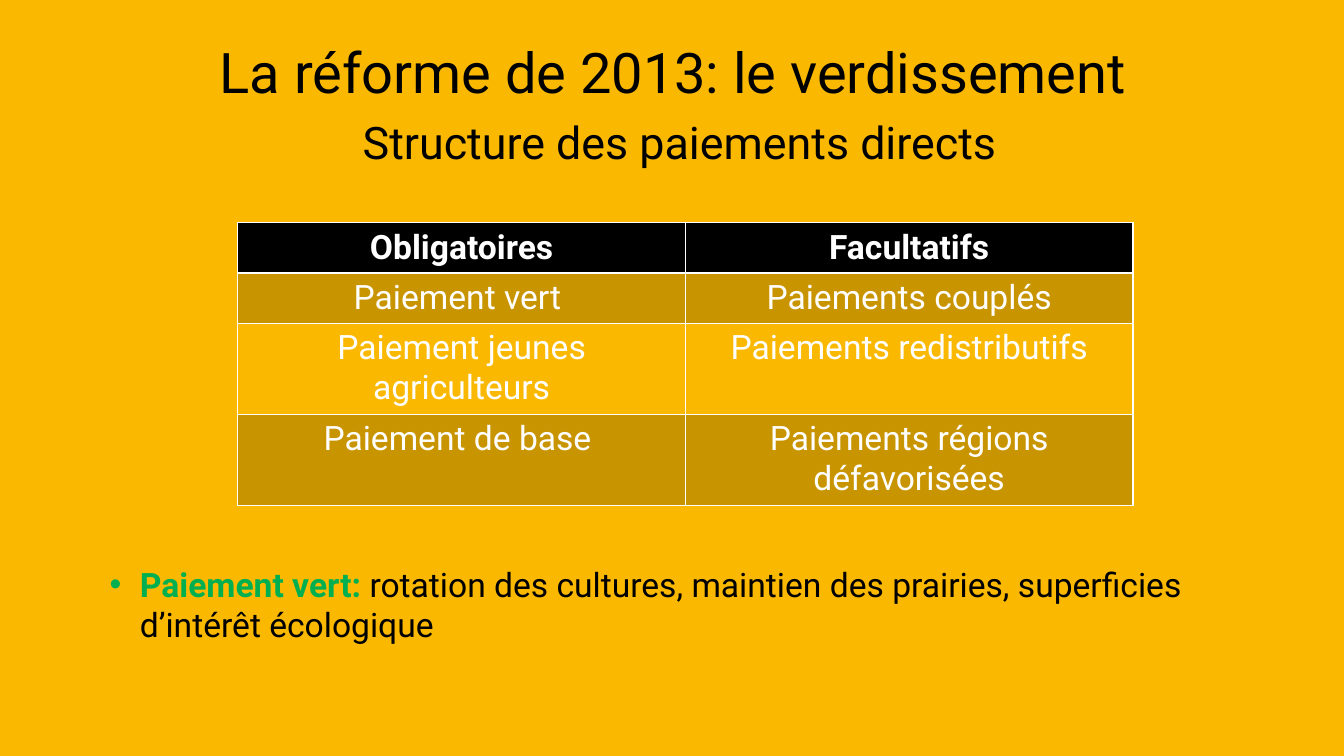
from lxml import etree
from pptx import Presentation
from pptx.dml.color import RGBColor
from pptx.enum import text
from pptx.oxml.ns import qn
from pptx.util import Pt

FONT = "Roboto"
YELLOW = RGBColor(0xFA, 0xB9, 0x00)
OCHRE = RGBColor(0xC8, 0x94, 0x00)
BLACK = RGBColor(0, 0, 0)
WHITE = RGBColor(0xFF, 0xFF, 0xFF)
GREEN = RGBColor(0x00, 0xB0, 0x50)

PAYMENTS = [
    ("Obligatoires", "Facultatifs"),
    ("Paiement vert ", "Paiements couplés"),
    ("Paiement jeunes agriculteurs", "Paiements redistributifs"),
    ("Paiement de base ", "Paiements régions défavorisées"),
]
ROW_FILLS = [BLACK, OCHRE, YELLOW, OCHRE]
ROW_HEIGHTS = [35.4, 35.4, 63.6, 63.6]


def set_attrs(obj, values):
    for name, value in values.items():
        setattr(obj, name, value)


def add_run(p, words, size, color, bold=False):
    r = p.add_run()
    r.text = words
    set_attrs(r.font, {"name": FONT, "size": Pt(size), "bold": bold})
    r.font.color.rgb = color


def add_text(s, left, top, width, height, frame_format, paragraph_format):
    tf = s.shapes.add_textbox(Pt(left), Pt(top), Pt(width), Pt(height)).text_frame
    set_attrs(tf, {"word_wrap": True, **frame_format})
    p = tf.paragraphs[0]
    set_attrs(p, paragraph_format)
    return p


def add_bullet(p, indent, hanging):
    pPr = p._p.get_or_add_pPr()
    pPr.set("marL", str(Pt(indent)))
    pPr.set("indent", str(-Pt(hanging)))
    etree.SubElement(pPr, qn("a:buFont")).set("typeface", "Arial")
    etree.SubElement(pPr, qn("a:buChar")).set("char", "•")


def add_bottom_border(cell, color, width):
    ln = etree.Element(qn("a:lnB"), w=str(Pt(width)))
    fill = etree.SubElement(ln, qn("a:solidFill"))
    etree.SubElement(fill, qn("a:srgbClr")).set("val", str(color))
    cell._tc.get_or_add_tcPr().insert(0, ln)


def add_payment_table(s, left, top, width):
    frame = s.shapes.add_table(len(PAYMENTS), 2, Pt(left), Pt(top),
                               Pt(width), Pt(sum(ROW_HEIGHTS)))
    table = frame.table
    for i, labels in enumerate(PAYMENTS):
        table.rows[i].height = Pt(ROW_HEIGHTS[i])
        for j, label in enumerate(labels):
            cell = table.cell(i, j)
            cell.fill.solid()
            cell.fill.fore_color.rgb = ROW_FILLS[i]
            p = cell.text_frame.paragraphs[0]
            p.alignment = text.PP_ALIGN.CENTER
            add_run(p, label, 24, WHITE, bold=i == 0)
            if i == 0:
                add_bottom_border(cell, WHITE, 2)


def main():
    prs = Presentation()
    set_attrs(prs, {"slide_width": Pt(960), "slide_height": Pt(540)})
    s = prs.slides.add_slide(prs.slide_layouts[6])
    s.background.fill.solid()
    s.background.fill.fore_color.rgb = YELLOW

    # Title and subtitle
    title = add_text(
        s, 69.84, 15.12, 846, 107.28,
        {"margin_left": 0, "margin_top": Pt(14.4), "margin_right": Pt(14.4),
         "margin_bottom": Pt(14.4), "vertical_anchor": text.MSO_ANCHOR.MIDDLE},
        {"alignment": text.PP_ALIGN.CENTER, "line_spacing": 1.2,
         "space_before": Pt(24)})
    add_run(title, "La réforme de 2013: le verdissement ", 40, BLACK)
    title.add_line_break()
    add_run(title, "Structure des paiements directs", 32, BLACK)

    # Direct payments
    add_payment_table(s, 169.92, 159.12, 639.36)

    # Green payment note
    note = add_text(s, 64.08, 398.88, 806.4, 65.52,
                    {"auto_size": text.MSO_AUTO_SIZE.SHAPE_TO_FIT_TEXT},
                    {"space_after": Pt(12)})
    add_bullet(note, 28.8, 21.6)
    add_run(note, "Paiement vert: ", 24, GREEN, bold=True)
    add_run(note, "rotation des cultures, maintien des prairies, "
                  "superficies d’intérêt écologique", 24, BLACK)

    prs.save("out.pptx")


if __name__ == "__main__":
    main()
